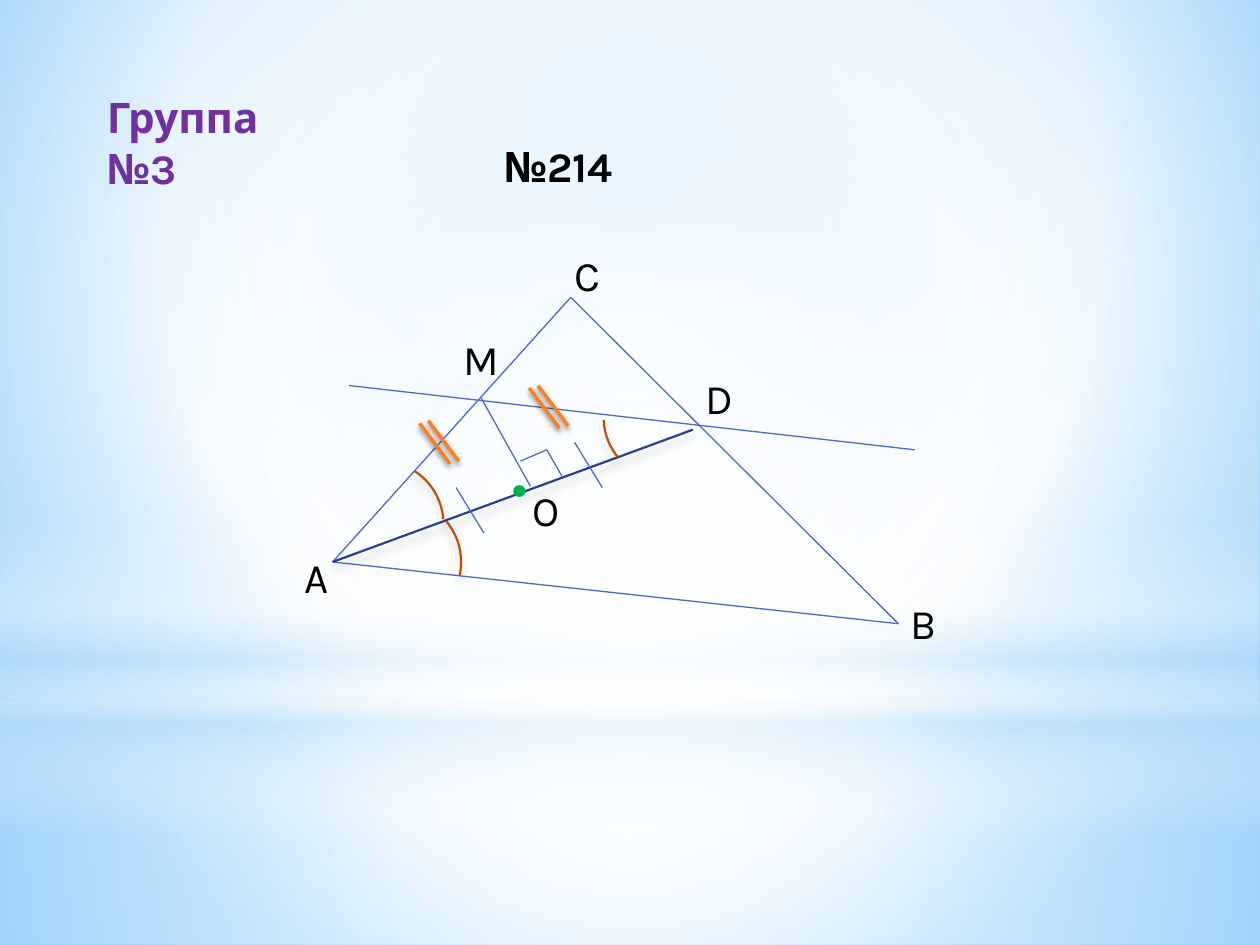
from dataclasses import dataclass
from typing import NamedTuple, Optional

from lxml.etree import SubElement
from pptx import Presentation
from pptx.dml.color import RGBColor
from pptx.enum.shapes import MSO_CONNECTOR, MSO_SHAPE
from pptx.enum.text import MSO_AUTO_SIZE
from pptx.oxml import parse_xml
from pptx.oxml.ns import nsdecls, qn
from pptx.util import Inches, Pt

COLORS = {
    "black": "000000", "white": "FFFFFF", "haze": "B4DCFA",
    "sky": "9ED5FF", "deep": "5BB9FF", "side": "4E67C8",
    "bisector": "2A3E8E", "angle": "BB5203", "tick": "FF8021",
    "center": "00B050", "group": "7030A0",
}
FONT = "Karla"
COLUMNS, ROWS = 10, 7.5

deck = Presentation()
deck.slide_width, deck.slide_height = Inches(10), Inches(7.5)
page = deck.slides.add_slide(deck.slide_layouts[6])


class Point(NamedTuple):
    column: float
    row: float


class Stop(NamedTuple):
    position: int
    color: str
    opacity: int = 100


@dataclass
class Shadow:
    opacity: float
    blur: float
    distance: float


@dataclass
class Stroke:
    color: str
    width: float
    shadow: Optional[Shadow] = None


@dataclass
class Label:
    text: str
    corner: Point
    width: float
    height: float = 0.5
    size: int = 24
    color: str = "black"
    bold: bool = False
    wrap: bool = False


@dataclass
class AngleArc:
    corner: Point
    start: float
    end: float
    rotation: float = 0


@dataclass
class Layer:
    kind: MSO_SHAPE
    top: float
    height: float
    stops: list
    linear: bool = False


SOFT = Shadow(20, 5, 4)
SIDE = Stroke("side", 0.75)
BISECTOR = Stroke("bisector", 1.25, SOFT)
ANGLE = Stroke("angle", 1.25, SOFT)
TICK = Stroke("tick", 2, Shadow(45, 3.1, 1.8))


def across(columns: float) -> int:
    return round(deck.slide_width * columns / COLUMNS)


def down(rows: float) -> int:
    return round(deck.slide_height * rows / ROWS)


def gradient(stops: list, linear: bool = False, focus: tuple = (50, 50, 50, 50)):
    """Gradient fill: top to bottom, or round a focus (left, top, right, bottom)."""
    marks = "".join(
        f'<a:gs pos="{stop.position * 1000}"><a:srgbClr val="{COLORS[stop.color]}">'
        f'<a:alpha val="{stop.opacity * 1000}"/></a:srgbClr></a:gs>' for stop in stops)
    left, top, right, bottom = (share * 1000 for share in focus)
    course = '<a:lin ang="5400000" scaled="0"/>' if linear else (
        f'<a:path path="circle"><a:fillToRect l="{left}" t="{top}" '
        f'r="{right}" b="{bottom}"/></a:path>')
    return parse_xml(f'<a:gradFill {nsdecls("a")} rotWithShape="1">'
                     f'<a:gsLst>{marks}</a:gsLst>{course}</a:gradFill>')


def apply_stroke(shape, stroke: Stroke) -> None:
    shape.line.color.rgb = RGBColor.from_string(COLORS[stroke.color])
    shape.line.width = Pt(stroke.width)
    effects = SubElement(shape.element.find(qn("p:spPr")), qn("a:effectLst"))
    if stroke.shadow:
        outer = SubElement(effects, qn("a:outerShdw"), dir="5400000", rotWithShape="0",
                           blurRad=str(Pt(stroke.shadow.blur)),
                           dist=str(Pt(stroke.shadow.distance)))
        tint = SubElement(outer, qn("a:srgbClr"), val=COLORS["black"])
        SubElement(tint, qn("a:alpha"), val=str(stroke.shadow.opacity * 1000))


def draw_segment(start: Point, end: Point, stroke: Stroke = SIDE, parent=page) -> None:
    line = parent.shapes.add_connector(
        MSO_CONNECTOR.STRAIGHT, across(start.column), down(start.row),
        across(end.column), down(end.row))
    apply_stroke(line, stroke)


def draw_arc(arc: AngleArc) -> None:
    shape = page.shapes.add_shape(MSO_SHAPE.ARC, across(arc.corner.column),
                                  down(arc.corner.row), across(1), down(1))
    # Adjustments count 0.6 per degree
    shape.adjustments[0], shape.adjustments[1] = arc.start * 0.6, arc.end * 0.6
    shape.rotation = arc.rotation
    shape.fill.background()
    apply_stroke(shape, ANGLE)


def draw_layer(layer: Layer) -> None:
    shape = page.shapes.add_shape(layer.kind, 0, down(layer.top),
                                  across(COLUMNS), down(layer.height))
    shape.line.fill.background()
    shape.shadow.inherit = False
    shape.element.spPr.insert(2, gradient(layer.stops, layer.linear))


def draw_label(label: Label) -> None:
    box = page.shapes.add_textbox(across(label.corner.column), down(label.corner.row),
                                  across(label.width), down(label.height))
    frame = box.text_frame
    frame.text = label.text
    frame.word_wrap = label.wrap
    frame.auto_size = MSO_AUTO_SIZE.SHAPE_TO_FIT_TEXT
    font = frame.paragraphs[0].runs[0].font
    font.name, font.size, font.bold = FONT, Pt(label.size), label.bold
    font.color.rgb = RGBColor.from_string(COLORS[label.color])


# Background glow and its hazy layers
page.background.fill.solid()
backdrop = page.element.find(".//" + qn("p:bgPr"))
backdrop.replace(backdrop[0], gradient(
    [Stop(0, "sky"), Stop(60, "white"), Stop(100, "deep")], focus=(20, 10, 20, 60)))
for layer in (
    Layer(MSO_SHAPE.RECTANGLE, 5.58, 1.92,
          [Stop(0, "white", 91), Stop(37, "white", 76), Stop(100, "haze", 79)]),
    Layer(MSO_SHAPE.RECTANGLE, 0, 5.58,
          [Stop(0, "white", 89), Stop(48, "white", 62), Stop(100, "haze", 79)]),
    Layer(MSO_SHAPE.RECTANGLE, 4.12, 2.5,
          [Stop(0, "white", 0), Stop(29, "white", 30), Stop(45, "haze", 40),
           Stop(55, "white", 26), Stop(65, "haze", 60), Stop(100, "white", 0)], True),
    Layer(MSO_SHAPE.OVAL, 1.75, 5.58, [Stop(0, "white"), Stop(56, "white", 0)]),
):
    draw_layer(layer)

# Triangle, bisector AD, line through M and D, perpendicular MO
A, B, C, D = Point(2.64, 4.46), Point(7.13, 4.95), Point(4.53, 2.36), Point(5.5, 3.41)
for start, end in ((A, C), (A, B), (C, B),
                   (Point(4.21, 3.86), Point(3.82, 3.16)),
                   (Point(2.77, 3.06), Point(7.26, 3.57))):
    draw_segment(start, end)
draw_segment(A, D, BISECTOR)

# Equal angles
for arc in (AngleArc(Point(2.52, 3.66), 303.25, 355.55),
            AngleArc(Point(2.66, 3.96), 291.74, 343.83, 28.4),
            AngleArc(Point(4.79, 2.81), 303.25, 340.15, 197.4)):
    draw_arc(arc)

# Equal halves of AD
for column, row in (Point(3.62, 3.87), Point(4.56, 3.51)):
    draw_segment(Point(column, row), Point(column + 0.22, row + 0.36))

# Right angle at O
right_angle = page.shapes.add_group_shape()
knee = Point(4.34, 3.57)
draw_segment(Point(4.13, 3.66), knee, parent=right_angle)
draw_segment(knee, Point(4.46, 3.78), parent=right_angle)

# Double ticks on the equal sides AM and MD
for column, row in (Point(3.33, 3.36), Point(4.2, 3.08)):
    ticks = page.shapes.add_group_shape()
    for shift, rise in ((0, 0), (0.07, 0.02)):
        top = Point(column + shift, row - rise)
        draw_segment(top, Point(top.column + 0.24, top.row + 0.32), TICK, ticks)

# Headings, point names and the dot at O
for label in (
    Label("№214", Point(3.9, 1.07), 1.12, bold=True),
    Label("A", Point(2.32, 4.33), 0.4),
    Label("C", Point(4.46, 1.93), 0.4),
    Label("B", Point(7.13, 4.69), 0.39),
    Label("D", Point(5.5, 2.91), 0.41),
    Label("O", Point(4.13, 3.8), 0.43),
    Label("M", Point(3.58, 2.6), 0.44),
    Label(".", Point(3.95, 3.06), 0.51, 1.11, size=60, color="center"),
    Label("Группа №3", Point(0.75, 0.68), 1.96, color="group", bold=True, wrap=True),
):
    draw_label(label)

deck.save("out.pptx")
